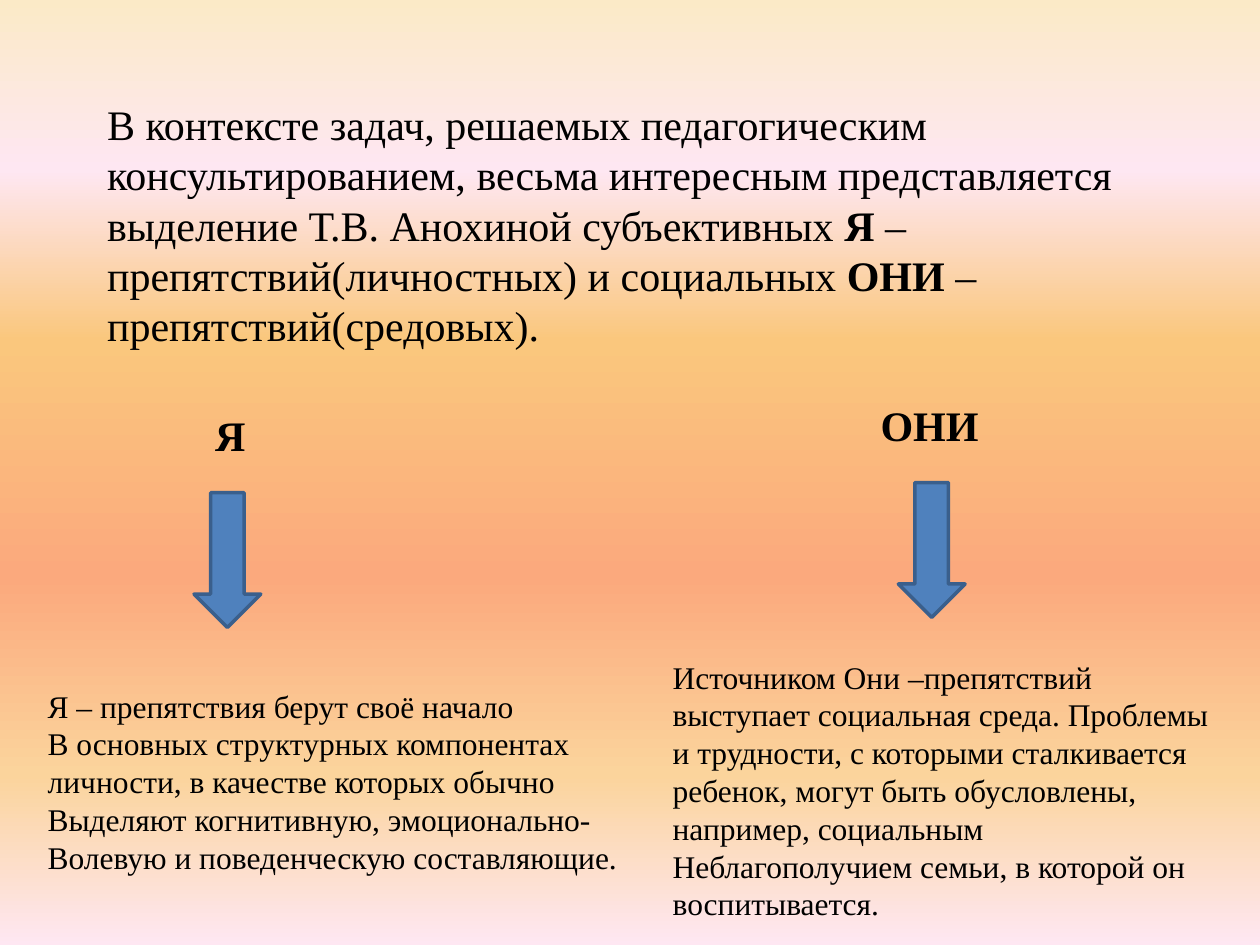
from lxml.etree import SubElement
from pptx import Presentation
from pptx.dml.color import RGBColor
from pptx.enum.shapes import MSO_SHAPE
from pptx.enum.text import MSO_ANCHOR, MSO_AUTO_SIZE, PP_ALIGN
from pptx.oxml.ns import qn
from pptx.util import Inches, Pt

BLACK = RGBColor(0x00, 0x00, 0x00)
BLUE = RGBColor(0x4F, 0x81, 0xBD)
DARK_BLUE = RGBColor(0x3A, 0x5F, 0x8C)
CREAM = RGBColor(0xFB, 0xEA, 0xC7)
PINK = RGBColor(0xFE, 0xE7, 0xF2)
AMBER = RGBColor(0xFA, 0xC7, 0x7D)
CORAL = RGBColor(0xFB, 0xA9, 0x7D)
SAND = RGBColor(0xFB, 0xD4, 0x9C)
SUNSET = [(0, CREAM), (18, PINK), (36, AMBER), (61, CORAL), (82, SAND), (100, PINK)]


class SlideBuilder:
    font_name = "Times New Roman"

    def __init__(self, slide):
        self.slide = slide

    def background(self, stops):
        fill = self.slide.background.fill
        fill.gradient()
        fill.gradient_angle = 270
        # The public API cannot add gradient stops
        stop_list = next(self.slide.element.iter(qn("a:gsLst")))
        for stop in list(stop_list):
            stop_list.remove(stop)
        for percent, color in stops:
            stop = SubElement(stop_list, qn("a:gs"), pos=str(percent * 1000))
            SubElement(stop, qn("a:srgbClr"), val=str(color))

    def format_run(self, run, size, bold):
        font = run.font
        font.name, font.size, font.bold = self.font_name, Pt(size), bold
        font.color.rgb = BLACK

    def title(self, left, top, width, height, parts):
        title = self.slide.shapes.title
        title.left, title.top = Inches(left), Inches(top)
        title.width, title.height = Inches(width), Inches(height)
        text_frame = title.text_frame
        text_frame.vertical_anchor = MSO_ANCHOR.MIDDLE
        text_frame.auto_size = MSO_AUTO_SIZE.NONE
        paragraph = text_frame.paragraphs[0]
        paragraph.alignment = PP_ALIGN.LEFT
        for text, bold in parts:
            run = paragraph.add_run()
            run.text = text
            self.format_run(run, 24, bold)

    def text(self, left, top, width, height, text, size=18, bold=False, wrap=True):
        box = self.slide.shapes.add_textbox(
            Inches(left), Inches(top), Inches(width), Inches(height))
        text_frame = box.text_frame
        text_frame.word_wrap = wrap
        text_frame.auto_size = MSO_AUTO_SIZE.SHAPE_TO_FIT_TEXT
        text_frame.text = text
        for paragraph in text_frame.paragraphs:
            for run in paragraph.runs:
                self.format_run(run, size, bold)

    def down_arrow(self, left, top):
        arrow = self.slide.shapes.add_shape(
            MSO_SHAPE.DOWN_ARROW, Inches(left), Inches(top), Inches(0.53), Inches(1.07))
        arrow.shadow.inherit = False
        arrow.fill.solid()
        arrow.fill.fore_color.rgb = BLUE
        arrow.line.color.rgb = DARK_BLUE
        arrow.line.width = Pt(2)


def main():
    presentation = Presentation()
    presentation.slide_width, presentation.slide_height = Inches(10), Inches(7.5)
    slide = presentation.slides.add_slide(presentation.slide_layouts[0])
    subtitle = slide.placeholders[1].element
    subtitle.getparent().remove(subtitle)
    builder = SlideBuilder(slide)
    builder.background(SUNSET)

    # Introduction
    builder.title(0.75, 0.68, 8.5, 2.2, [
        ("В контексте задач, решаемых педагогическим консультированием, весьма "
         "интересным представляется выделение Т.В. Анохиной субъективных ", False),
        ("Я", True),
        (" – препятствий(личностных) и социальных ", False),
        ("ОНИ", True),
        (" –препятствий(средовых).", False),
    ])

    # Personal obstacles
    builder.down_arrow(1.54, 3.91)
    builder.text(1.61, 3.2, 0.45, 0.5, "Я", size=24, bold=True, wrap=False)
    builder.text(0.28, 5.4, 4.96, 1.62, "\n".join([
        "Я – препятствия берут своё начало",
        "В основных структурных компонентах",
        "личности, в качестве которых обычно",
        "Выделяют когнитивную, эмоционально-",
        "Волевую и поведенческую составляющие.",
    ]))

    # Social obstacles
    builder.text(6.89, 3.12, 1.18, 0.5, "ОНИ", size=24, bold=True)
    builder.down_arrow(7.13, 3.83)
    builder.text(5.24, 5.17, 4.57, 2.22, "\n".join([
        "Источником Они –препятствий выступает социальная среда. Проблемы и трудности, "
        "с которыми сталкивается ребенок, могут быть обусловлены, например, социальным",
        "Неблагополучием семьи, в которой он воспитывается.",
    ]))

    presentation.save("out.pptx")


if __name__ == "__main__":
    main()
